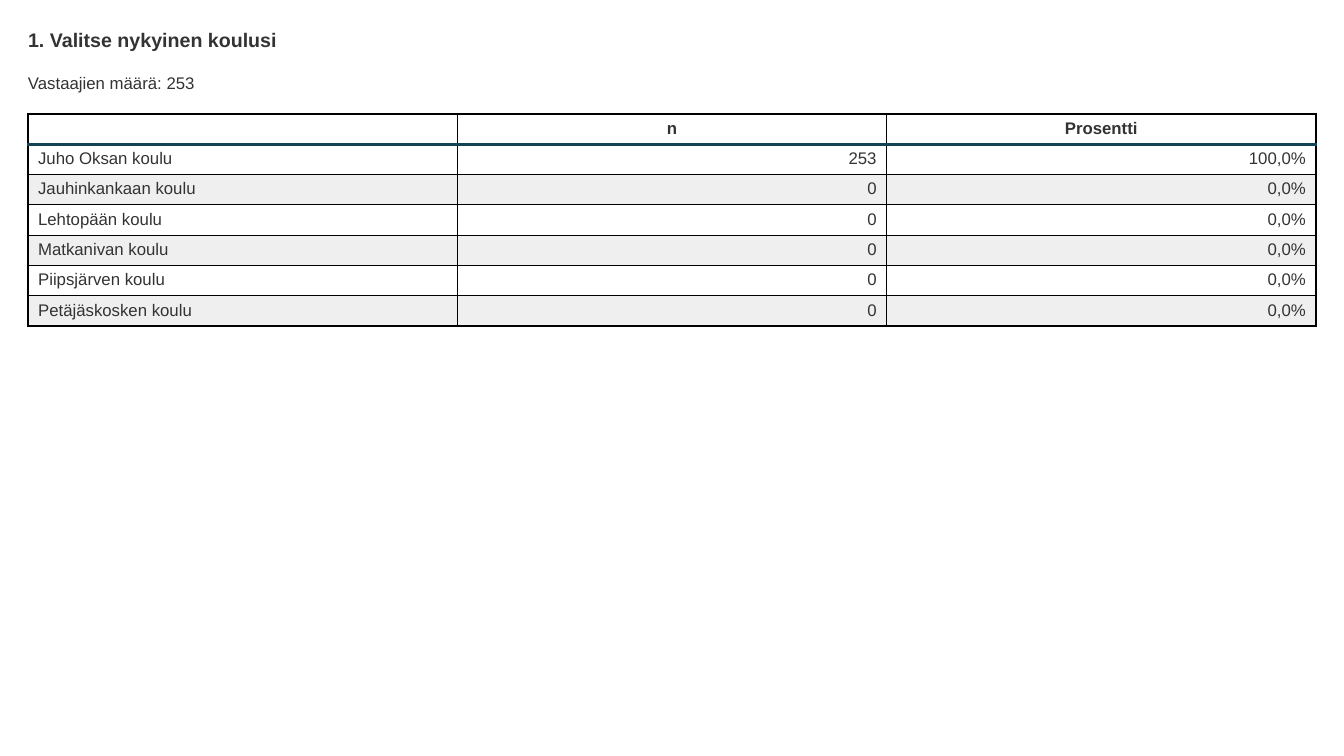
"""Build the survey slide with the respondent count for each school."""
from lxml.etree import SubElement
from pptx import Presentation
from pptx.dml.color import RGBColor
from pptx.enum.text import MSO_ANCHOR, MSO_AUTO_SIZE, PP_ALIGN
from pptx.oxml.ns import qn
from pptx.util import Pt

PX = 914400 / 100.8
LEFT, WIDTH = 28, 1288
TABLE_TOP, TABLE_HEIGHT = 114, 212
ROWS = [
    ("", "n", "Prosentti"),
    ("Juho Oksan koulu", "253", "100,0%"),
    ("Jauhinkankaan koulu", "0", "0,0%"),
    ("Lehtopään koulu", "0", "0,0%"),
    ("Matkanivan koulu", "0", "0,0%"),
    ("Piipsjärven koulu", "0", "0,0%"),
    ("Petäjäskosken koulu", "0", "0,0%"),
]


def style_paragraph(paragraph, size, bold, alignment=PP_ALIGN.LEFT):
    """Set the font and alignment of a paragraph."""
    paragraph.alignment = alignment
    paragraph.font.name = "Arial"
    paragraph.font.size = Pt(size)
    paragraph.font.bold = bold
    paragraph.font.color.rgb = RGBColor.from_string("333333")


def add_border(cell, side, color, points):
    """Draw one border of a table cell."""
    line = SubElement(cell._tc.get_or_add_tcPr(), qn(f"a:ln{side}"), w=str(Pt(points)))
    SubElement(SubElement(line, qn("a:solidFill")), qn("a:srgbClr"), val=color)


presentation = Presentation()
presentation.slide_width = round(1344 * PX)
presentation.slide_height = round(756 * PX)
slide = presentation.slides.add_slide(presentation.slide_layouts[5])

title = slide.shapes.title
respondents = slide.shapes.add_textbox(0, 0, 0, 0)
for shape, text, top, height, size, bold in (
    (title, "1. Valitse nykyinen koulusi", 28, 23, 14, True),
    (respondents, "Vastaajien määrä: 253", 73, 20, 12, False),
):
    shape.left, shape.top = round(LEFT * PX), round(top * PX)
    shape.width, shape.height = round(WIDTH * PX), round(height * PX)
    frame = shape.text_frame
    frame.margin_left = frame.margin_right = frame.margin_top = frame.margin_bottom = 0
    frame.word_wrap = True
    frame.auto_size = MSO_AUTO_SIZE.SHAPE_TO_FIT_TEXT
    frame.vertical_anchor = MSO_ANCHOR.TOP
    frame.text = text
    style_paragraph(frame.paragraphs[0], size, bold)

table = slide.shapes.add_table(
    len(ROWS), len(ROWS[0]),
    round(LEFT * PX), round(TABLE_TOP * PX), round(WIDTH * PX), round(TABLE_HEIGHT * PX),
).table
table.horz_banding = False

for row_index, values in enumerate(ROWS):
    is_header = row_index == 0
    for column_index, value in enumerate(values):
        cell = table.cell(row_index, column_index)
        cell.text = value
        if column_index == 0:
            alignment = PP_ALIGN.LEFT
        else:
            alignment = PP_ALIGN.CENTER if is_header else PP_ALIGN.RIGHT
        style_paragraph(cell.text_frame.paragraphs[0], 12, is_header, alignment)
        for side in "LRTB":
            below_header = (row_index, side) in ((0, "B"), (1, "T"))
            add_border(cell, side, *(("124456", 2) if below_header else ("000000", 1)))
        if row_index and row_index % 2 == 0:
            cell.fill.solid()
            cell.fill.fore_color.rgb = RGBColor.from_string("EFEFEF")
        else:
            cell.fill.background()

presentation.save("out.pptx")
